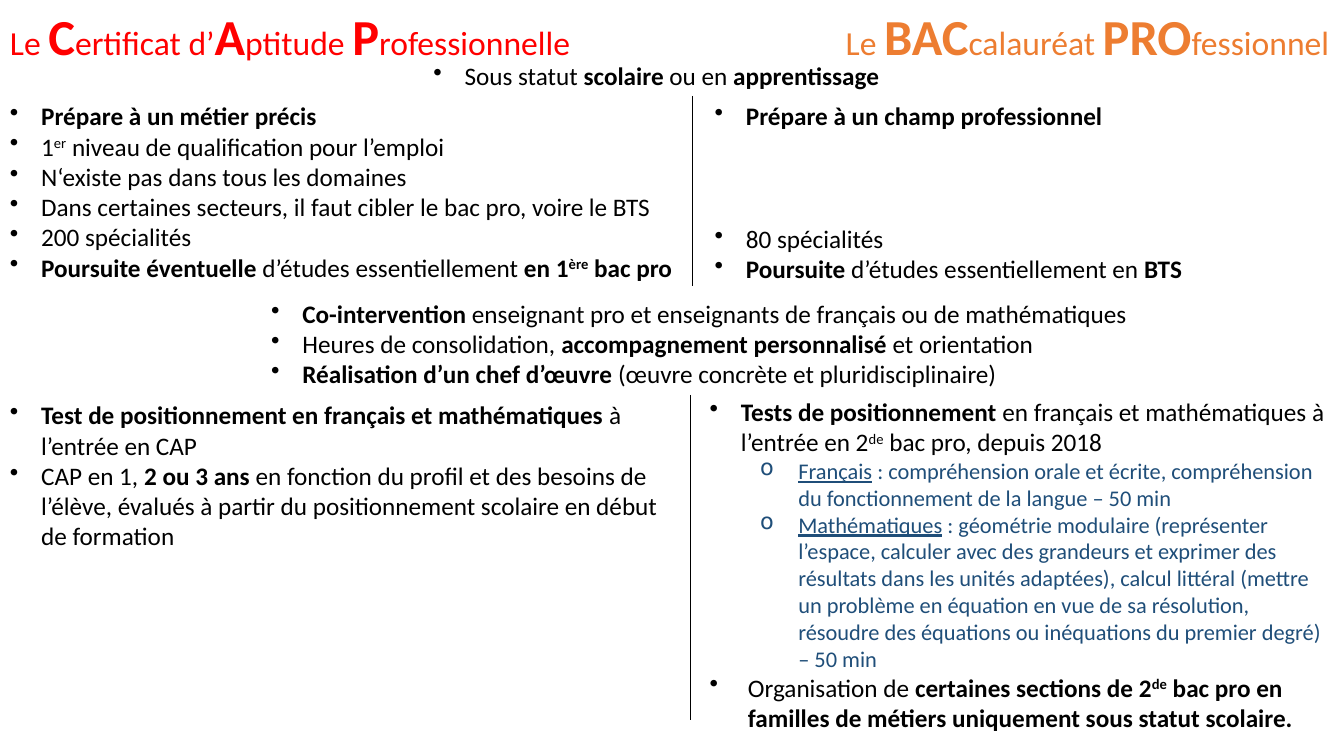
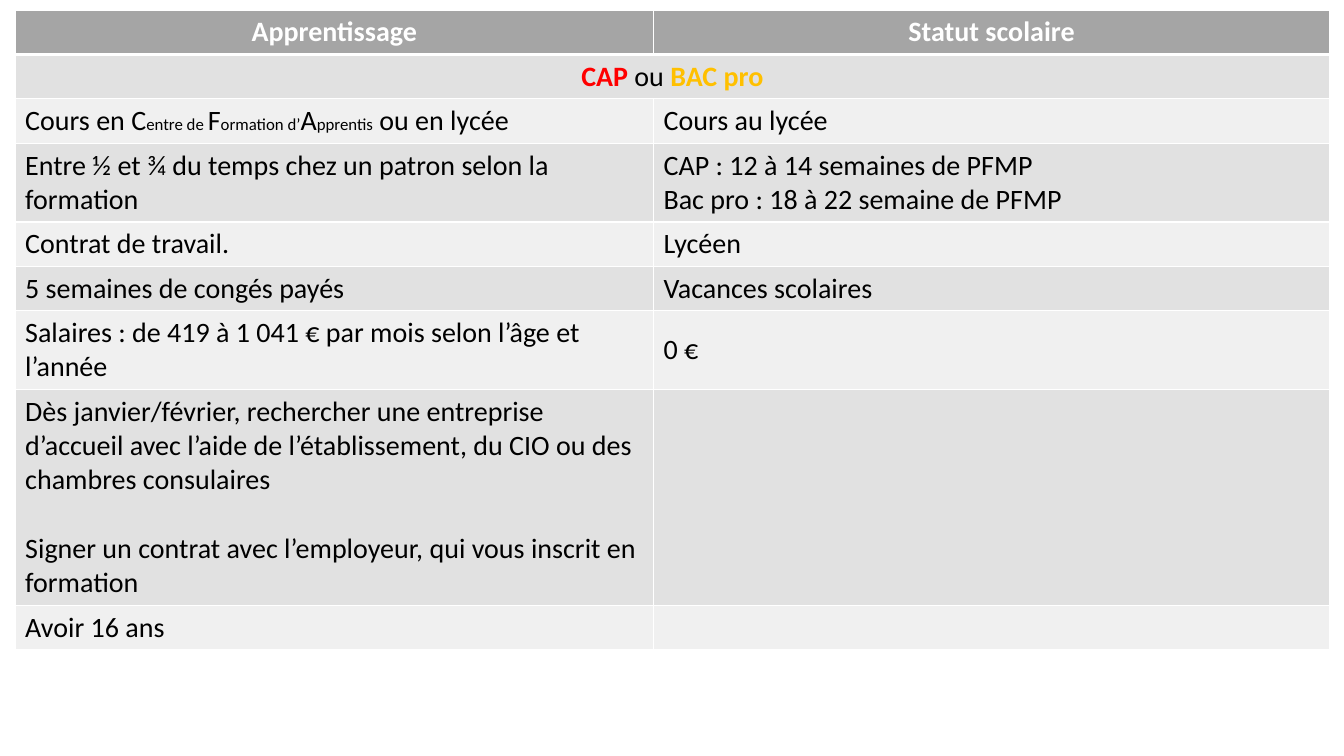
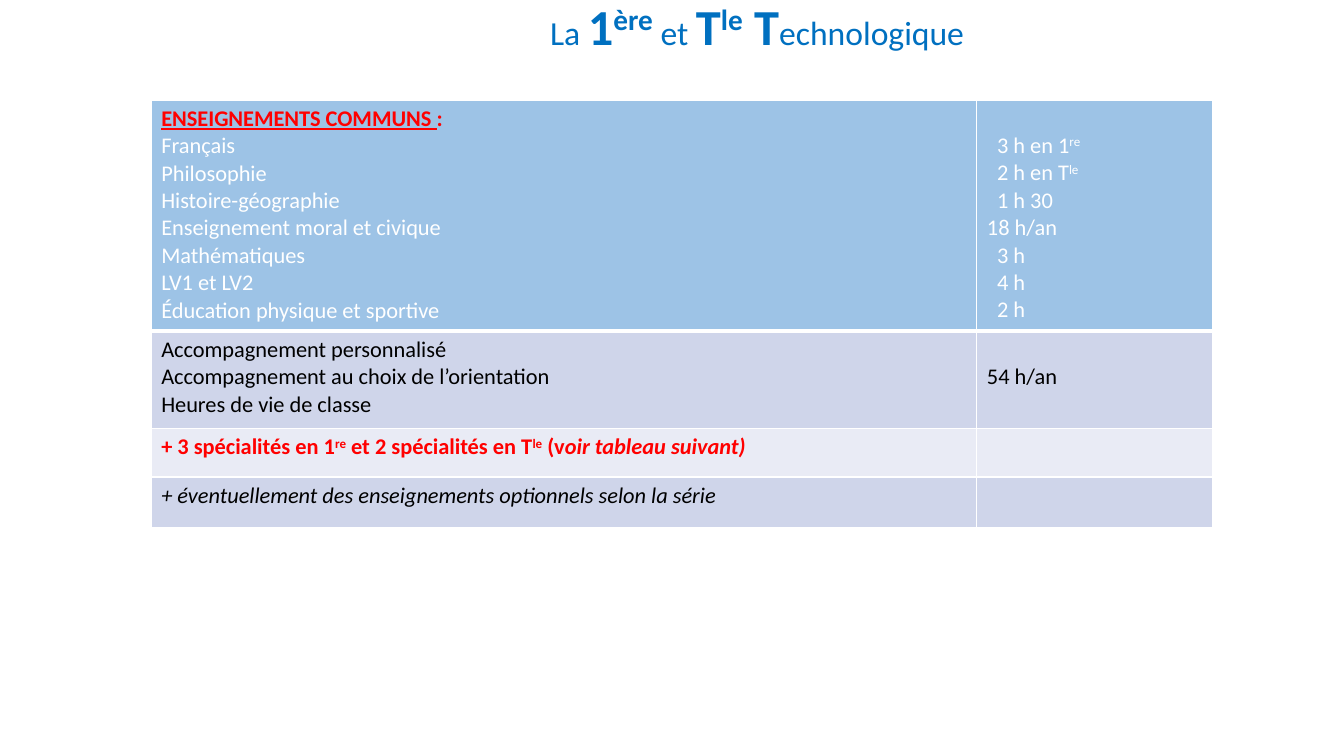
from dataclasses import dataclass, replace
from typing import Optional

from lxml.etree import SubElement
from pptx import Presentation
from pptx.dml.color import RGBColor
from pptx.enum.shapes import MSO_CONNECTOR
from pptx.enum.text import MSO_ANCHOR, MSO_AUTO_SIZE, PP_ALIGN
from pptx.oxml.ns import qn
from pptx.util import Emu, Inches, Pt


@dataclass(frozen=True)
class Theme:
    font: str = "Calibri"
    black: str = "000000"
    white: str = "FFFFFF"
    red: str = "FF0000"
    gold: str = "FFC000"
    orange: str = "ED7D31"
    blue: str = "0070C0"
    navy: str = "1F4E79"
    gray_header: str = "A5A5A5"
    gray_bands: tuple = ("E1E1E1", "F0F0F0")
    blue_header: str = "9DC3E6"
    blue_bands: tuple = ("CFD5EA", "E9EBF5")
    title: int = 24
    capital: int = 36
    body: int = 18
    detail: int = 16
    cell: int = 20
    small: int = 12
    line_spacing: float = 1.22
    rule: float = 0.5
    border: int = 1
    header_border: int = 3


THEME = Theme()
COLUMNS, ROWS = 160, 90  # grid of the slide

# Each mark switches one property of the text on and off
MARKS = {"*": "bold", "_": "underline", "~": "italic", "^": "raised",
         "#": "other_size", "<": "red", ">": "gold"}


@dataclass(frozen=True)
class Line:
    """One paragraph: marked text and its style."""
    text: str
    size: int = THEME.body
    other_size: int = THEME.body
    color: str = THEME.black
    bullet: str = ""
    left: float = 0
    hanging: float = 0
    lines_before: int = 0
    align: Optional[PP_ALIGN] = None


def title_line(text, color):
    return Line(text, THEME.title, THEME.capital, color)


def item(text, **style):
    return replace(Line(text, bullet="•", left=0.31, hanging=0.31), **style)


def sub_item(text):
    return item(text, bullet="o", left=0.88, hanging=0.38,
                size=THEME.detail, color=THEME.navy)


def cell_line(text, **style):
    return replace(Line(text, THEME.cell, THEME.small), **style)


def detail_lines(*texts, **style):
    return [Line(text, THEME.detail, **style) for text in texts]


def split_marks(text):
    """Yield each stretch of text with the set of properties switched on."""
    active, stretch = set(), ""
    for character in text:
        if character in MARKS:
            if stretch:
                yield stretch, set(active)
            active ^= {MARKS[character]}
            stretch = ""
        else:
            stretch += character
    if stretch:
        yield stretch, active


class Deck:
    def __init__(self, theme):
        self.theme = theme
        self.presentation = Presentation()
        self.presentation.slide_width = Inches(13.33)
        self.presentation.slide_height = Inches(7.5)
        self.slide = None

    def new_slide(self):
        self.slide = self.presentation.slides.add_slide(
            self.presentation.slide_layouts[6])

    def x(self, columns):
        return Emu(round(self.presentation.slide_width * columns / COLUMNS))

    def y(self, rows):
        return Emu(round(self.presentation.slide_height * rows / ROWS))

    # Text
    def add_lines(self, text_frame, lines):
        for index, line in enumerate(lines):
            paragraph = (text_frame.add_paragraph() if index
                         else text_frame.paragraphs[0])
            self.format_paragraph(paragraph, line)
            for text, active in split_marks(line.text):
                run = paragraph.add_run()
                run.text = text
                self.format_run(run, line, active)

    def format_paragraph(self, paragraph, line):
        if line.align is not None:
            paragraph.alignment = line.align
        properties = paragraph._p.get_or_add_pPr()
        if line.left:
            properties.set("marL", str(Inches(line.left)))
            properties.set("indent", str(-Inches(line.hanging)))
        if line.bullet:
            SubElement(properties, qn("a:buChar")).set("char", line.bullet)
        if line.lines_before:
            paragraph.space_before = Pt(round(
                line.lines_before * line.size * self.theme.line_spacing, 1))

    def format_run(self, run, line, active):
        font = run.font
        font.name = self.theme.font
        font.size = Pt(line.other_size if "other_size" in active else line.size)
        font.bold = "bold" in active
        font.italic = "italic" in active
        font.underline = "underline" in active
        color = line.color
        for name in active & {"red", "gold"}:
            color = getattr(self.theme, name)
        font.color.rgb = RGBColor.from_string(color)
        if "raised" in active:
            run._r.get_or_add_rPr().set("baseline", "30000")

    def text(self, left, top, width, height, lines, wrap=True):
        shape = self.slide.shapes.add_textbox(
            self.x(left), self.y(top), self.x(width), self.y(height))
        shape.text_frame.word_wrap = wrap
        shape.text_frame.auto_size = MSO_AUTO_SIZE.SHAPE_TO_FIT_TEXT
        self.add_lines(shape.text_frame, lines)

    def title(self, left, top, width, text, color):
        self.text(left, top, width, 8.5, [title_line(text, color)], wrap=False)

    # Lines
    def divider(self, column, top, bottom):
        connector = self.slide.shapes.add_connector(
            MSO_CONNECTOR.STRAIGHT, self.x(column), self.y(top),
            self.x(column), self.y(bottom))
        connector.line.color.rgb = RGBColor.from_string(self.theme.black)
        connector.line.width = Pt(self.theme.rule)
        SubElement(connector._element.spPr, qn("a:effectLst"))

    # Tables
    def table(self, left, top, widths, heights, rows, header, bands):
        """Rows hold one list of lines per cell; a single cell spans the row."""
        frame = self.slide.shapes.add_table(
            len(rows), len(widths), self.x(left), self.y(top),
            self.x(sum(widths)), self.y(sum(heights)))
        table = frame.table
        table.first_row = table.horz_banding = False
        for column, width in zip(table.columns, widths):
            column.width = self.x(width)
        for index, (row, height) in enumerate(zip(rows, heights)):
            table.rows[index].height = self.y(height)
            fill = bands[(index - 1) % 2] if index else header
            for column in range(len(widths)):
                cell = table.cell(index, column)
                self.borders(cell, under_header=index == 1, is_header=index == 0)
                cell.fill.solid()
                cell.fill.fore_color.rgb = RGBColor.from_string(fill)
            if len(row) < len(widths):
                table.cell(index, 0).merge(table.cell(index, len(widths) - 1))
            for column, lines in enumerate(row):
                self.add_lines(table.cell(index, column).text_frame, lines)
        return table

    def borders(self, cell, under_header, is_header):
        properties = cell._tc.get_or_add_tcPr()
        thick = {"lnT": under_header, "lnB": is_header}
        for side in ("lnL", "lnR", "lnT", "lnB"):
            width = (self.theme.header_border if thick.get(side)
                     else self.theme.border)
            line = SubElement(properties, qn("a:" + side), w=str(Pt(width)))
            fill = SubElement(line, qn("a:solidFill"))
            SubElement(fill, qn("a:srgbClr"), val=self.theme.white)


def diplomas_slide(deck):
    deck.new_slide()
    deck.title(0, 0, 69.8, "Le #*C*#ertificat d’#*A*#ptitude #*P*#rofessionnelle",
               THEME.red)
    deck.title(99.5, 0, 60.5, "Le #*BAC*#calauréat #*PRO*#fessionnel", THEME.orange)
    deck.text(50.4, 6.6, 55.9, 4.8,
              [item("Sous statut *scolaire* ou en *apprentissage*")], wrap=False)

    # Purpose of each diploma
    deck.text(83.9, 11.4, 58.7, 23, [
        item("*Prépare à un champ professionnel*"),
        item("80 spécialités", lines_before=3),
        item("*Poursuite *d’études essentiellement en *BTS*"),
    ], wrap=False)
    deck.text(0, 11.4, 82.4, 23, [
        item("*Prépare à un métier précis*"),
        item("1^er^ niveau de qualification pour l’emploi"),
        item("N‘existe pas dans tous les domaines"),
        item("Dans certaines secteurs, il faut cibler le bac pro, voire le BTS"),
        item("200 spécialités"),
        item("*Poursuite éventuelle *d’études essentiellement *en 1^ère^ bac pro*"),
    ])
    deck.divider(82.4, 11.4, 34)

    # Shared by both diplomas
    deck.text(31.1, 34.9, 105.6, 12.1, [
        item("*Co-intervention* enseignant pro et enseignants de français"
             " ou de mathématiques"),
        item("Heures de consolidation, *accompagnement personnalisé *et orientation"),
        item("*Réalisation d’un chef d’œuvre *(œuvre concrète et pluridisciplinaire)"),
    ])

    # Placement tests and organisation
    deck.text(0, 47, 81.1, 19.4, [
        item("*Test de positionnement en français et mathématiques *à l’entrée en CAP"),
        item("CAP en 1, *2 ou 3 ans *en fonction du profil et des besoins de l’élève,"
             " évalués à partir du positionnement scolaire en début de formation"),
    ])
    deck.divider(82.2, 47, 85.7)
    deck.text(83.3, 46.6, 76.7, 41.6, [
        item("*Tests de positionnement *en français et mathématiques à l’entrée"
             " en 2^de^ bac pro, depuis 2018"),
        sub_item("_Français_ : compréhension orale et écrite, compréhension"
                 " du fonctionnement de la langue – 50 min"),
        sub_item("_Mathématiques_ : géométrie modulaire (représenter l’espace,"
                 " calculer avec des grandeurs et exprimer des résultats dans les"
                 " unités adaptées), calcul littéral (mettre un problème en équation"
                 " en vue de sa résolution, résoudre des équations ou inéquations"
                 " du premier degré) – 50 min"),
        item("Organisation de *certaines sections de 2^de^ bac pro en familles"
             " de métiers uniquement sous statut scolaire.*", left=0.38, hanging=0.38),
    ])


def status_slide(deck):
    deck.new_slide()
    centered = {"align": PP_ALIGN.CENTER}
    rows = [
        [[cell_line(f"*{name}*", color=THEME.white, **centered)]
         for name in ("Apprentissage", "Statut scolaire")],
        [[cell_line("<*CAP*< ou >*BAC pro*>", **centered)]],
        [[cell_line("Cours en C#entre de #F#ormation d’#A#pprentis# ou en lycée")],
         [cell_line("Cours au lycée")]],
        [[cell_line("Entre ½ et ¾ du temps chez un patron selon la formation")],
         [cell_line("CAP : 12 à 14 semaines de PFMP"),
          cell_line("Bac pro : 18 à 22 semaine de PFMP")]],
        [[cell_line("Contrat de travail.")], [cell_line("Lycéen")]],
        [[cell_line("5 semaines de congés payés")], [cell_line("Vacances scolaires")]],
        [[cell_line("Salaires : de 419 à 1 041 € par mois selon l’âge et l’année")],
         [cell_line("0 €")]],
        [[cell_line("Dès janvier/février, rechercher une entreprise d’accueil avec"
                    " l’aide de l’établissement, du CIO ou des chambres consulaires"),
          cell_line("Signer un contrat avec l’employeur, qui vous inscrit en formation",
                    lines_before=1)], []],
        [[cell_line("Avoir 16 ans")], []],
    ]
    line_counts = (1, 1, 1, 2, 1, 1, 2, 6, 1)
    heights = [1.2 + 4.07 * count for count in line_counts]
    table = deck.table(1.8, 1.2, (76, 80.5), heights, rows,
                       THEME.gray_header, THEME.gray_bands)
    for index in range(2, len(rows)):
        for column in range(2):
            table.cell(index, column).vertical_anchor = MSO_ANCHOR.MIDDLE


def technology_slide(deck):
    deck.new_slide()
    deck.title(64.3, -1.2, 53.3, "La #*1^ère^*# et #*T^le^ T*#echnologique", THEME.blue)

    white, indented = {"color": THEME.white}, {"color": THEME.white, "left": 0.1}
    subjects = detail_lines("<*_ENSEIGNEMENTS COMMUNS _:*<") + detail_lines(
        "Français", "Philosophie", "Histoire-géographie",
        "Enseignement moral et civique", "Mathématiques", "LV1 et LV2",
        "Éducation physique et sportive", **white)
    hours = (detail_lines("3 h en 1^re^", "2 h en T^le^", "1 h 30", **indented)
             + detail_lines("18 h/an", **white)
             + detail_lines("3 h", "4 h", "2 h", **indented))
    support = detail_lines("Accompagnement personnalisé",
                           "Accompagnement au choix de l’orientation",
                           "Heures de vie de classe")
    specialities = detail_lines("<*+ 3 spécialités en 1^re^ et 2 spécialités en T^le^"
                                " (v~oir tableau suivant)~*<")
    options = detail_lines("~+ éventuellement des enseignements optionnels"
                           " selon la série~")
    rows = [[subjects, hours], [support, detail_lines("54 h/an")],
            [specialities, []], [options, []]]
    table = deck.table(18, 11.9, (98.3, 28.1), (27.5, 11.6, 5.8, 6), rows,
                       THEME.blue_header, THEME.blue_bands)
    # Hours start one line lower than the subjects
    for index in range(2):
        table.cell(index, 1).margin_top = Inches(0.32)


def main():
    deck = Deck(THEME)
    diplomas_slide(deck)
    status_slide(deck)
    technology_slide(deck)
    deck.presentation.save("out.pptx")


if __name__ == "__main__":
    main()
